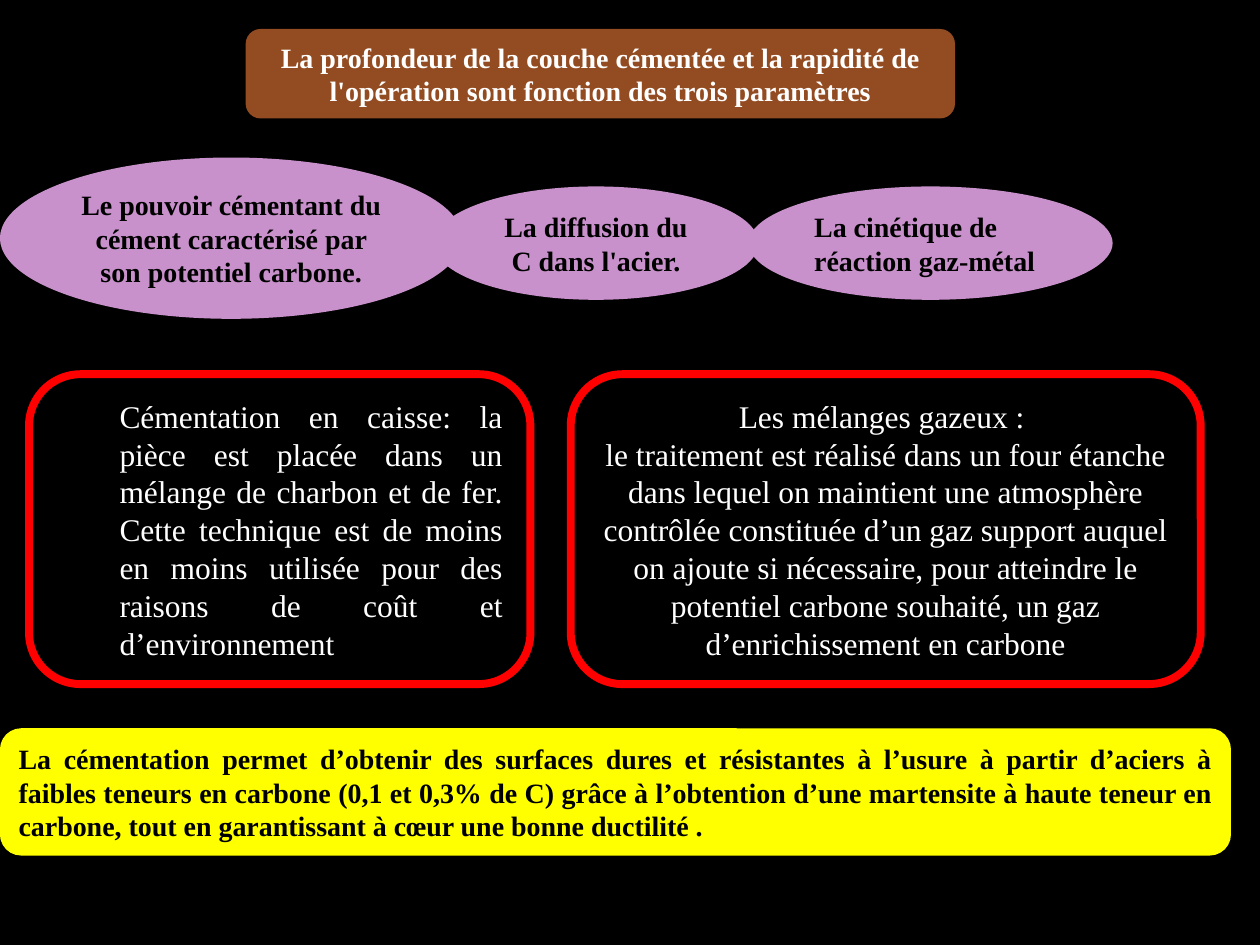
"""Build the slide on the parameters and methods of carburizing."""
from dataclasses import dataclass

from pptx import Presentation
from pptx.dml.color import RGBColor
from pptx.enum.shapes import MSO_SHAPE
from pptx.enum.text import MSO_ANCHOR, MSO_AUTO_SIZE, PP_ALIGN
from pptx.util import Inches, Pt


@dataclass(frozen=True)
class Theme:
    """Colours, font and sizes of the slide."""
    font: str = "Times New Roman"
    black: str = "000000"
    white: str = "FFFFFF"
    brown: str = "934C22"
    mauve: str = "C991CB"
    yellow: str = "FFFF00"
    red: str = "FF0000"
    small: int = 16
    large: int = 18
    edge: float = 4.5


class Board:
    """Draw styled elements, placed in percent of the slide's size."""

    def __init__(self, deck, theme):
        """Add a blank slide with the theme's background."""
        self.deck, self.theme = deck, theme
        self.slide = deck.slides.add_slide(deck.slide_layouts[6])
        self.paint(self.slide.background.fill, theme.black)

    def paint(self, fill, tone):
        """Give a fill one solid colour."""
        fill.solid()
        fill.fore_color.rgb = RGBColor.from_string(tone)

    def shape(self, kind, area):
        """Add a bare preset shape."""
        wide, high = self.deck.slide_width, self.deck.slide_height
        spots = [int(part * full / 100) for part, full in zip(area, (wide, high) * 2)]
        item = self.slide.shapes.add_shape(kind, *spots)
        item.shadow.inherit = False
        return item

    def label(self, item, lines, align, tone, size, bold, level=0):
        """Fill a shape with styled paragraphs."""
        frame = item.text_frame
        form = {"word_wrap": True, "vertical_anchor": MSO_ANCHOR.MIDDLE,
                "auto_size": MSO_AUTO_SIZE.SHAPE_TO_FIT_TEXT}
        for name, value in form.items():
            setattr(frame, name, value)
        frame.text = "\n".join(lines)
        style = {"name": self.theme.font, "size": Pt(size), "bold": bold}
        for para in frame.paragraphs:
            para.alignment, para.level = align, level
            for run in para.runs:
                for name, value in style.items():
                    setattr(run.font, name, value)
                run.font.color.rgb = RGBColor.from_string(tone)

    def plate(self, area, text, fill, tone, align, kind=MSO_SHAPE.ROUNDED_RECTANGLE):
        """Add a filled shape with bold text."""
        item = self.shape(kind, area)
        self.paint(item.fill, fill)
        item.line.fill.background()
        self.label(item, [text], align, tone, self.theme.small, True)

    def oval(self, area, text, align=PP_ALIGN.CENTER):
        """Add a parameter ellipse."""
        self.plate(area, text, self.theme.mauve, self.theme.black, align, MSO_SHAPE.OVAL)

    def panel(self, left, width, lines, align, level=0):
        """Add an outlined method panel."""
        item = self.shape(MSO_SHAPE.ROUNDED_RECTANGLE, (left, 39.6, width, 32.8))
        item.fill.background()
        self.paint(item.line.fill, self.theme.red)
        item.line.width = Pt(self.theme.edge)
        self.label(item, lines, align, self.theme.white, self.theme.large, False, level)


def main():
    """Build and save the deck."""
    deck = Presentation()
    deck.slide_width, deck.slide_height = Inches(10), Inches(7.5)
    look = Theme()
    board = Board(deck, look)
    board.plate((0, 77.07, 97.7, 13.47),
                "La cémentation permet d’obtenir des surfaces dures et résistantes à l’usure "
                "à partir d’aciers à faibles teneurs en carbone (0,1 et 0,3% de C) grâce à "
                "l’obtention d’une martensite à haute teneur en carbone, tout en garantissant "
                "à cœur une bonne ductilité .",
                look.yellow, look.black, PP_ALIGN.JUSTIFY)
    board.plate((19.5, 3.07, 56.3, 9.47),
                "La profondeur de la couche cémentée et la rapidité de l'opération sont "
                "fonction des trois paramètres",
                look.brown, look.white, PP_ALIGN.CENTER)
    board.oval((0, 16.67, 36.7, 17.07),
               "Le pouvoir cémentant du cément caractérisé par son potentiel carbone.")
    board.oval((59.4, 19.73, 28.9, 12), "La cinétique de réaction gaz-métal", PP_ALIGN.LEFT)
    board.oval((34.4, 19.73, 25.8, 12), "La diffusion du C dans l'acier.")
    board.panel(45.3, 50, [
        "Les mélanges gazeux : ",
        "le traitement est réalisé dans un four étanche dans lequel on maintient une "
        "atmosphère contrôlée constituée d’un gaz support auquel on ajoute si nécessaire, "
        "pour atteindre le potentiel carbone souhaité, un gaz d’enrichissement en carbone",
    ], PP_ALIGN.CENTER)
    board.panel(2.3, 39.8, [
        "Cémentation en caisse: la pièce est placée dans un mélange de charbon et de fer. "
        "Cette technique est de moins en moins utilisée pour des raisons de coût et "
        "d’environnement",
    ], PP_ALIGN.JUSTIFY, level=1)
    deck.save("out.pptx")


if __name__ == "__main__":
    main()
